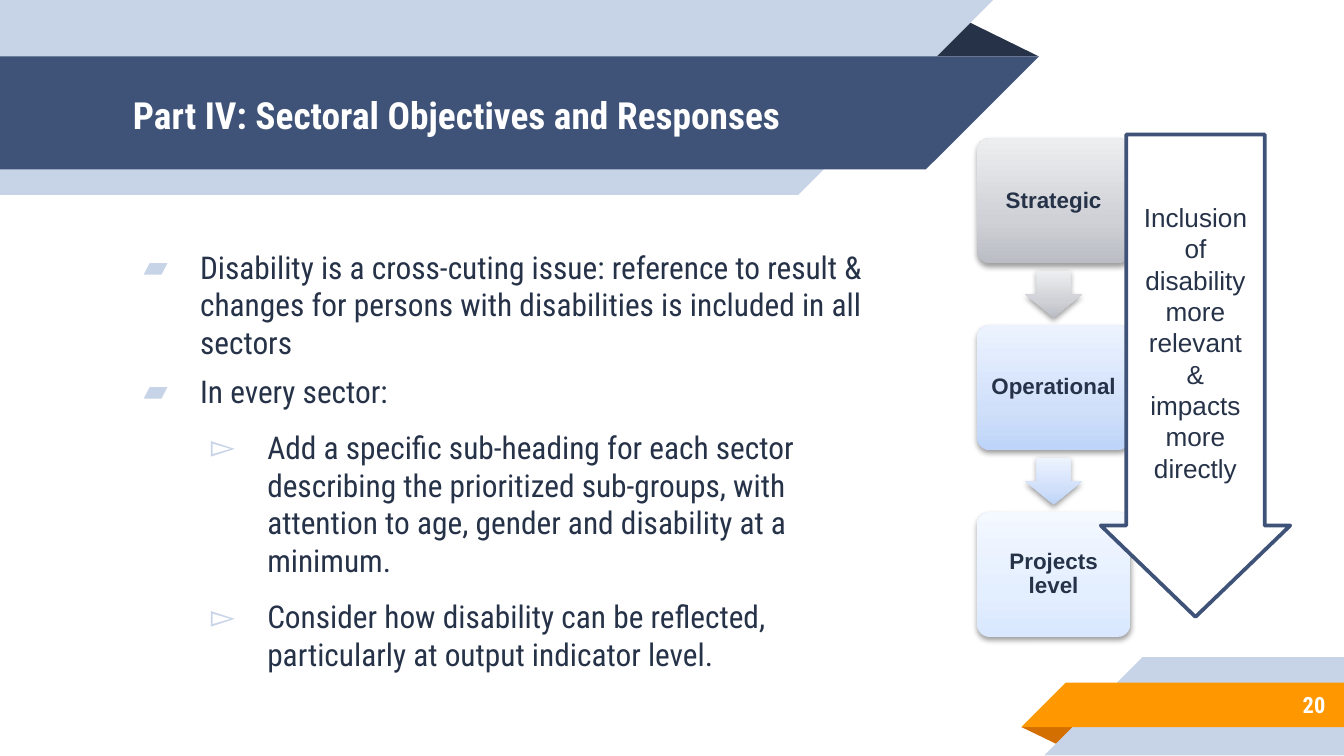
from dataclasses import dataclass

from lxml import etree
from pptx import Presentation
from pptx.dml.color import RGBColor
from pptx.enum.shapes import MSO_SHAPE as SHAPE
from pptx.enum.text import MSO_ANCHOR as ANCHOR, PP_ALIGN as ALIGN
from pptx.oxml.ns import qn
from pptx.util import Inches, Pt


@dataclass(frozen=True)
class Theme:
    navy: str = "3F5378"
    ink: str = "263248"
    pale: str = "C7D3E6"
    orange: str = "FF9800"
    rust: str = "D26F00"
    white: str = "FFFFFF"
    head_font: str = "Roboto Condensed"
    label_font: str = "Arial"
    title: float = 20
    body: float = 16.8
    callout: float = 14
    label: float = 12


T = Theme()
GREY = ("BABDC4", "CFD1D6", "EDEEF0")
BLUE = ("BED4F9", "D1E0FA", "ECF3FE")
ICE = ("D9E7FF", "E3EEFF", "F4F8FF")
LEVELS = [("Strategic", GREY), ("Operational", BLUE), ("Projects level", ICE)]
BULLETS = [
    (0, "Disability is a cross-cuting issue: reference to result & changes "
        "for persons with disabilities is included in all sectors"),
    (0, "In every sector:"),
    (1, "Add a specific sub-heading for each sector describing the prioritized "
        "sub-groups, with attention to age, gender and disability at a minimum."),
    (1, "Consider how disability can be reflected, particularly at output "
        "indicator level."),
]


def rgb(value):
    return RGBColor.from_string(value)


def add(parent, tag, **attrs):
    return etree.SubElement(parent, qn(tag), attrs)


def set_font(p, size, color, name, bold=False):
    p.font.size, p.font.name, p.font.bold = Pt(size), name, bold
    p.font.color.rgb = rgb(color)


def set_frame(sp, inset):
    tf = sp.text_frame
    tf.word_wrap = True
    tf.vertical_anchor = ANCHOR.MIDDLE
    tf.margin_left = tf.margin_right = Inches(inset)
    tf.margin_top = tf.margin_bottom = Inches(inset)
    return tf


def add_text(s, box, text, size, align=ALIGN.LEFT):
    sp = s.shapes.add_textbox(*map(Inches, box))
    p = set_frame(sp, 0.1).paragraphs[0]
    p.text, p.alignment = text, align
    set_font(p, size, T.white, T.head_font, True)


def add_polygon(s, color, points):
    start, *rest = [(Inches(x), Inches(y)) for x, y in points]
    builder = s.shapes.build_freeform(*start)
    builder.add_line_segments(rest)
    sp = builder.convert_to_shape()
    sp.shadow.inherit = False
    sp.fill.solid()
    sp.fill.fore_color.rgb = rgb(color)
    sp.line.fill.background()


def add_ribbon(s, color, left, top, right, height, cut_left=False):
    """Band with one end cut at 45 degrees."""
    bottom = top + height
    if cut_left:
        points = [(left + height, top), (right, top), (right, bottom), (left, bottom)]
    else:
        points = [(left, top), (right, top), (right - height, bottom), (left, bottom)]
    add_polygon(s, color, points)


def header(s, x, y):
    add_polygon(s, T.ink, [(x + 6.88, y + 0.42), (x + 7.16, y + 0.14), (x + 7.73, y + 0.42)])
    add_ribbon(s, T.pale, x, y, x + 7.39, 1.45)
    add_ribbon(s, T.navy, x, y + 0.42, x + 7.73, 0.84)
    add_text(s, (x + 0.89, y + 0.43, 6.01, 0.84),
             "Part IV: Sectoral Objectives and Responses", T.title)


def footer(s, x, y, right):
    add_polygon(s, T.rust, [(x, y + 0.52), (x + 0.43, y + 0.52), (x + 0.29, y + 0.66)])
    add_ribbon(s, T.pale, x + 0.17, y, right, 0.73, cut_left=True)
    add_ribbon(s, T.orange, x, y + 0.19, right, 0.33, cut_left=True)
    add_text(s, (x + 0.73, y + 0.18, 1.63, 0.35), "20", T.label, ALIGN.RIGHT)


def body(s, x, y, w, h):
    tf = set_frame(s.shapes.add_textbox(*map(Inches, (x, y, w, h))), 0.1)
    for i, (level, text) in enumerate(BULLETS):
        p = tf.add_paragraph() if i else tf.paragraphs[0]
        p.text, p.level = text, level
        p.space_before = Pt(10 if level else 6)
        pPr = p._p.get_or_add_pPr()
        pPr.set("marL", str(Inches(0.5 * (level + 1))))
        pPr.set("indent", str(Inches(-0.42)))
        add(add(pPr, "a:buClr"), "a:srgbClr", val=T.pale)
        add(pPr, "a:buFont", typeface=T.head_font)
        add(pPr, "a:buChar", char="▻" if level else "▰")
        set_font(p, T.body, T.ink, T.head_font)


def add_glossy(s, kind, box, colors, adjustments):
    """Borderless shape with a vertical gradient and a soft shadow."""
    sp = s.shapes.add_shape(kind, *map(Inches, box))
    for i, value in enumerate(adjustments):
        sp.adjustments[i] = value
    sp.fill.gradient()
    sp.fill.gradient_angle = 90
    sp.line.fill.background()
    sp.shadow.inherit = False
    spPr = sp._element.spPr
    stops = spPr.find(".//" + qn("a:gsLst"))
    for stop in list(stops):
        stops.remove(stop)
    for pos, color in zip((0, 35, 100), colors):
        add(add(stops, "a:gs", pos=str(pos * 1000)), "a:srgbClr", val=color)
    shadow = add(spPr.find(qn("a:effectLst")), "a:outerShdw", blurRad=str(Pt(3.1)),
                 dist=str(Pt(1.6)), dir="5400000", rotWithShape="0")
    add(add(shadow, "a:srgbClr", val="000000"), "a:alpha", val="38000")
    return sp


def level_flow(s, x, y, w, h):
    box_h, arrow_w, arrow_h = 0.93, 0.42, 0.35
    step = (h - box_h) / (len(LEVELS) - 1)
    gap = step - box_h
    for i, (text, colors) in enumerate(LEVELS):
        top = y + i * step
        sp = add_glossy(s, SHAPE.ROUNDED_RECTANGLE, (x, top, w, box_h), colors, [0.1])
        p = set_frame(sp, 0.04).paragraphs[0]
        p.text, p.alignment, p.line_spacing = text, ALIGN.CENTER, 0.9
        set_font(p, T.label, T.ink, T.label_font, True)
        if i < len(LEVELS) - 1:
            arrow = (x + (w - arrow_w) / 2, top + box_h + (gap - arrow_h) / 2,
                     arrow_w, arrow_h)
            add_glossy(s, SHAPE.DOWN_ARROW, arrow, colors, [0.6, 0.5])


def inclusion_arrow(s, x, y, w, h):
    sp = s.shapes.add_shape(SHAPE.DOWN_ARROW, *map(Inches, (x, y, w, h)))
    sp.adjustments[0], sp.adjustments[1] = 0.73, 0.482
    sp.shadow.inherit = False
    sp.fill.solid()
    sp.fill.fore_color.rgb = rgb(T.white)
    sp.line.color.rgb = rgb(T.navy)
    sp.line.width = Pt(2)
    p = set_frame(sp, 0.1).paragraphs[0]
    p.text = "Inclusion of disability more relevant & impacts more directly"
    p.alignment = ALIGN.CENTER
    set_font(p, T.callout, T.ink, T.label_font)


def main():
    prs = Presentation()
    prs.slide_width, prs.slide_height = Inches(10), Inches(45 / 8)  # 16:9
    s = prs.slides.add_slide(prs.slide_layouts[6])
    footer(s, 7.6, 4.89, 10)
    header(s, 0, 0)
    body(s, 0.89, 1.54, 5.69, 3.77)
    level_flow(s, 7.27, 1.03, 1.14, 3.71)
    inclusion_arrow(s, 8.19, 1, 1.41, 3.59)
    prs.save("out.pptx")


if __name__ == "__main__":
    main()
